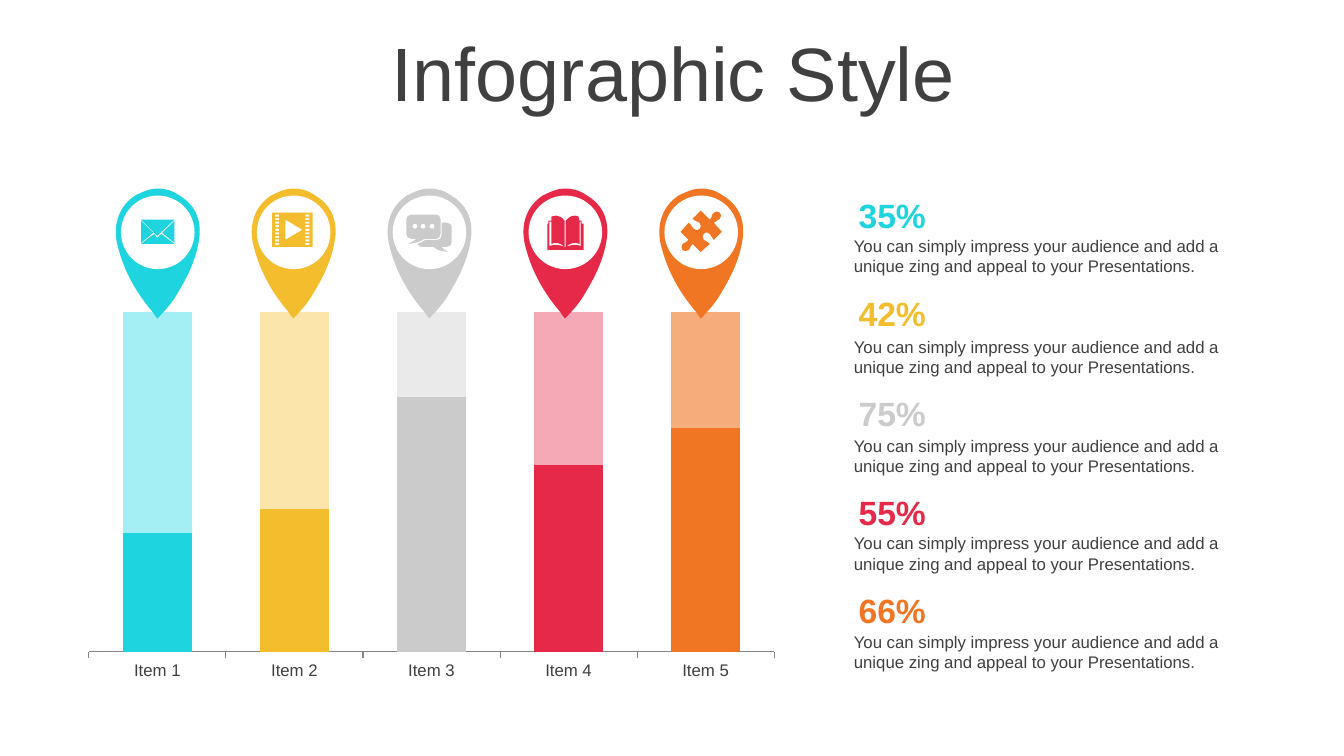
import pptx
import pptx.chart.data
import pptx.dml.color
import pptx.enum.chart
import pptx.enum.shapes
import pptx.enum.text
import pptx.oxml
import pptx.util
import lxml.etree

Inches, Pt = pptx.util.Inches, pptx.util.Pt
RGBColor = pptx.dml.color.RGBColor
qn = pptx.oxml.ns.qn

DARK = RGBColor(0x40, 0x40, 0x40)
AXIS_GRAY = RGBColor(0x86, 0x86, 0x86)
WHITE = RGBColor(0xFF, 0xFF, 0xFF)
SOLID = [RGBColor(0x1E, 0xD4, 0xDE), RGBColor(0xF4, 0xBD, 0x2D), RGBColor(0xCB, 0xCB, 0xCB),
         RGBColor(0xE6, 0x29, 0x49), RGBColor(0xF0, 0x76, 0x24)]
PALE = [RGBColor(0xA4, 0xEF, 0xF3), RGBColor(0xFB, 0xE5, 0xAB), RGBColor(0xEA, 0xEA, 0xEA),
        RGBColor(0xF5, 0xA9, 0xB6), RGBColor(0xF6, 0xAD, 0x7C)]
PERCENTS = [35, 42, 75, 55, 66]
FIGURE_TOPS = [1.88, 2.86, 3.85, 4.83, 5.8]
DETAIL_TOPS = [2.29, 3.29, 4.27, 5.24, 6.22]
DESCRIPTION = "You can simply impress your audience and add a unique zing and appeal to your Presentations."
PIN_PITCH = 5.39 / 4


def draw_outline(shapes, contours, color, shift=0):
    """Fill contours, in inches, whose 2-tuples are points and 6-tuples are Bezier curves."""
    builder = None
    for contour in contours:
        ends = [(Inches(step[-2] + shift), Inches(step[-1])) for step in contour]
        if builder is None:
            builder = shapes.build_freeform(*ends[0])
        else:
            builder.move_to(*ends[0])
        builder.add_line_segments(ends[1:], close=True)
    shape = builder.convert_to_shape()
    left, top = shape.left, shape.top
    segments = list(shape.element.iter(qn("a:lnTo")))
    steps = [step for contour in contours for step in contour[1:]]
    for segment, step in zip(segments, steps):
        if len(step) == 6:
            segment.tag = qn("a:cubicBezTo")
            for n in (0, 2):
                control = lxml.etree.Element(qn("a:pt"), x=str(Inches(step[n] + shift) - left),
                                             y=str(Inches(step[n + 1]) - top))
                segment.insert(n // 2, control)
    finish(shape, color)


def finish(shape, color):
    shape.shadow.inherit = False
    shape.fill.solid()
    shape.fill.fore_color.rgb = color
    shape.line.fill.background()


deck = pptx.Presentation()
deck.slide_width, deck.slide_height = Inches(13.33), Inches(7.5)
page = deck.slides.add_slide(deck.slide_layouts[5])

title = page.shapes.title
title.left, title.top, title.width, title.height = Inches(0.35), Inches(0.37), Inches(12.66), Inches(0.79)
title.text_frame.text = "Infographic Style"
title.text_frame.auto_size = pptx.enum.text.MSO_AUTO_SIZE.NONE
title.text_frame.vertical_anchor = pptx.enum.text.MSO_ANCHOR.MIDDLE
para = title.text_frame.paragraphs[0]
para.alignment = pptx.enum.text.PP_ALIGN.CENTER
para.line_spacing = 0.9
para.font.name, para.font.size, para.font.color.rgb = "Arial", Pt(54), DARK

# Stacked columns
data = pptx.chart.data.CategoryChartData()
data.categories = [f"Item {n}" for n in range(1, 6)]
data.add_series("Series 1", PERCENTS)
data.add_series("Series 2", [100 - percent for percent in PERCENTS])
chart = page.shapes.add_chart(pptx.enum.chart.XL_CHART_TYPE.COLUMN_STACKED_100, Inches(0.74), Inches(3.02),
                              Inches(7.08), Inches(3.8), data).chart
chart.has_legend = chart.has_title = False
chart.font.name, chart.font.size, chart.font.color.rgb = "Arial", Pt(18), DARK
plot = chart.plots[0]
plot.gap_width, plot.overlap, plot.vary_by_categories = 100, 100, False
for series, colors in zip(plot.series, (SOLID, PALE)):
    series.format.fill.solid()
    series.format.fill.fore_color.rgb = SOLID[2]
    for index, color in enumerate(colors):
        fill = series.points[index].format.fill
        fill.solid()
        fill.fore_color.rgb = color
chart.value_axis.has_major_gridlines = False
chart.value_axis.visible = False
items = chart.category_axis
items.major_tick_mark = pptx.enum.chart.XL_TICK_MARK.OUTSIDE
items.tick_labels.font.name, items.tick_labels.font.size = "Arial", Pt(12)
items.tick_labels.font.color.rgb = DARK
items.format.line.color.rgb = AXIS_GRAY

# Pins above the columns
PIN = [(1.56, 1.87), (1.64, 1.87, 1.71, 1.89, 1.78, 1.94), (1.93, 2.03, 1.99, 2.16, 1.98, 2.33),
       (1.96, 2.54, 1.87, 2.73, 1.76, 2.91), (1.71, 3, 1.64, 3.08, 1.56, 3.16),
       (1.54, 3.13, 1.52, 3.11, 1.51, 3.09), (1.34, 2.89, 1.22, 2.67, 1.16, 2.41),
       (1.12, 2.21, 1.19, 2.04, 1.34, 1.94), (1.42, 1.9, 1.49, 1.87, 1.56, 1.87)]
for index, color in enumerate(SOLID):
    pin = page.shapes.add_group_shape()
    draw_outline(pin.shapes, [PIN], color, index * PIN_PITCH)
    disc = pin.shapes.add_shape(pptx.enum.shapes.MSO_SHAPE.OVAL, Inches(1.2 + index * PIN_PITCH),
                                Inches(1.94), Inches(0.73), Inches(0.73))
    finish(disc, WHITE)

# Icons inside the pins
envelope = [[(1.6, 2.32), (1.73, 2.42), (1.4, 2.42), (1.53, 2.32), (1.56, 2.36)],
            [(1.73, 2.19), (1.73, 2.41), (1.61, 2.31)],
            [(1.4, 2.19), (1.52, 2.31), (1.4, 2.41)],
            [(1.4, 2.18), (1.73, 2.18), (1.56, 2.34)]]

film = [[(2.7, 2.11), (3.1, 2.11), (3.1, 2.45), (2.7, 2.45)], [(2.83, 2.18), (2.83, 2.38), (3, 2.28)]]
for row in range(9):
    top = 2.13 + row * 0.28 / 8
    for left in (2.73, 3.03):
        film.append([(left, top), (left, top + 0.02), (left + 0.04, top + 0.02), (left + 0.04, top)])

chat = [[(4.38, 2.21), (4.43, 2.21), (4.46, 2.21, 4.48, 2.23, 4.48, 2.25), (4.48, 2.4),
         (4.48, 2.43, 4.46, 2.45, 4.43, 2.45), (4.38, 2.45), (4.39, 2.46, 4.39, 2.47, 4.44, 2.5),
         (4.35, 2.49, 4.34, 2.48, 4.3, 2.45), (4.18, 2.45), (4.17, 2.45, 4.15, 2.44, 4.14, 2.42),
         (4.17, 2.41, 4.2, 2.4, 4.22, 2.38), (4.34, 2.38), (4.36, 2.38, 4.38, 2.36, 4.38, 2.33)],
        [(4.08, 2.13), (4.33, 2.13), (4.35, 2.13, 4.37, 2.15, 4.37, 2.18), (4.37, 2.32),
         (4.37, 2.35, 4.35, 2.37, 4.33, 2.37), (4.21, 2.37), (4.16, 2.4, 4.14, 2.41, 4.05, 2.42),
         (4.1, 2.39, 4.11, 2.39, 4.13, 2.37), (4.08, 2.37), (4.05, 2.37, 4.03, 2.35, 4.03, 2.32),
         (4.03, 2.18), (4.03, 2.15, 4.05, 2.13, 4.08, 2.13)]]
for x in (4.12, 4.2, 4.29):
    chat.append([(x, 2.22), (x - 0.02, 2.22, x - 0.03, 2.23, x - 0.03, 2.25),
                 (x - 0.03, 2.26, x - 0.02, 2.27, x, 2.27), (x + 0.01, 2.27, x + 0.02, 2.26, x + 0.02, 2.25),
                 (x + 0.02, 2.23, x + 0.01, 2.22, x, 2.22)])

book = [[(5.6, 2.45), (5.6, 2.45, 5.61, 2.45, 5.61, 2.45), (5.67, 2.43, 5.7, 2.42, 5.76, 2.44),
         (5.76, 2.2), (5.75, 2.2), (5.75, 2.27, 5.75, 2.34, 5.75, 2.42), (5.7, 2.4, 5.66, 2.41, 5.61, 2.45),
         (5.61, 2.19), (5.64, 2.16, 5.66, 2.14, 5.7, 2.14), (5.71, 2.14, 5.73, 2.14, 5.74, 2.15),
         (5.74, 2.16, 5.74, 2.18, 5.75, 2.19), (5.77, 2.19), (5.77, 2.22), (5.79, 2.22), (5.79, 2.48),
         (5.43, 2.48), (5.43, 2.22), (5.44, 2.22), (5.44, 2.19), (5.47, 2.19),
         (5.47, 2.18, 5.47, 2.16, 5.47, 2.15), (5.49, 2.14, 5.51, 2.14, 5.52, 2.14),
         (5.55, 2.14, 5.58, 2.16, 5.6, 2.19), (5.6, 2.45), (5.56, 2.41, 5.51, 2.4, 5.47, 2.42),
         (5.47, 2.2), (5.45, 2.2), (5.45, 2.44), (5.51, 2.42, 5.55, 2.43, 5.6, 2.45)]]

puzzle = [[(7.14, 2.11), (7.15, 2.13, 7.16, 2.15, 7.14, 2.17), (7.12, 2.2, 7.1, 2.18, 7.08, 2.21),
           (7.16, 2.3), (7.08, 2.38), (7.05, 2.36, 7.06, 2.33, 7.04, 2.32),
           (7.02, 2.3, 6.99, 2.3, 6.98, 2.32), (6.97, 2.33, 6.96, 2.36, 6.98, 2.38),
           (7.01, 2.4, 7.01, 2.39, 7.04, 2.42), (6.95, 2.5), (6.87, 2.42),
           (6.84, 2.44, 6.86, 2.45, 6.83, 2.48), (6.81, 2.5, 6.78, 2.49, 6.77, 2.48),
           (6.76, 2.47, 6.75, 2.44, 6.77, 2.42), (6.79, 2.4, 6.81, 2.41, 6.83, 2.38),
           (6.75, 2.3), (6.83, 2.21), (6.87, 2.23, 6.85, 2.26, 6.88, 2.27),
           (6.9, 2.29, 6.92, 2.29, 6.94, 2.27), (6.95, 2.26, 6.96, 2.23, 6.94, 2.21),
           (6.91, 2.19, 6.9, 2.2, 6.87, 2.17), (6.95, 2.09), (7.04, 2.18),
           (7.07, 2.15, 7.05, 2.14, 7.08, 2.11), (7.1, 2.09, 7.13, 2.1, 7.14, 2.11)]]

for icon, color in zip((envelope, film, chat, book, puzzle), SOLID):
    draw_outline(page.shapes, icon, color)

# Percentages with their descriptions
for percent, color, figure_top, detail_top in zip(PERCENTS, SOLID, FIGURE_TOPS, DETAIL_TOPS):
    figure = page.shapes.add_textbox(Inches(8.37), Inches(figure_top), Inches(0.96), Inches(0.5))
    figure.text_frame.word_wrap = True
    figure.text_frame.vertical_anchor = pptx.enum.text.MSO_ANCHOR.MIDDLE
    para = figure.text_frame.paragraphs[0]
    para.text = f"{percent}%"
    para.alignment = pptx.enum.text.PP_ALIGN.CENTER
    para.font.name, para.font.size, para.font.bold = "Arial", Pt(24), True
    para.font.color.rgb = color

    detail = page.shapes.add_textbox(Inches(8.37), Inches(detail_top), Inches(4.23), Inches(0.51))
    detail.text_frame.word_wrap = True
    para = detail.text_frame.paragraphs[0]
    para.text = DESCRIPTION
    para.font.name, para.font.size, para.font.color.rgb = "Arial", Pt(12), DARK

deck.save("out.pptx")
